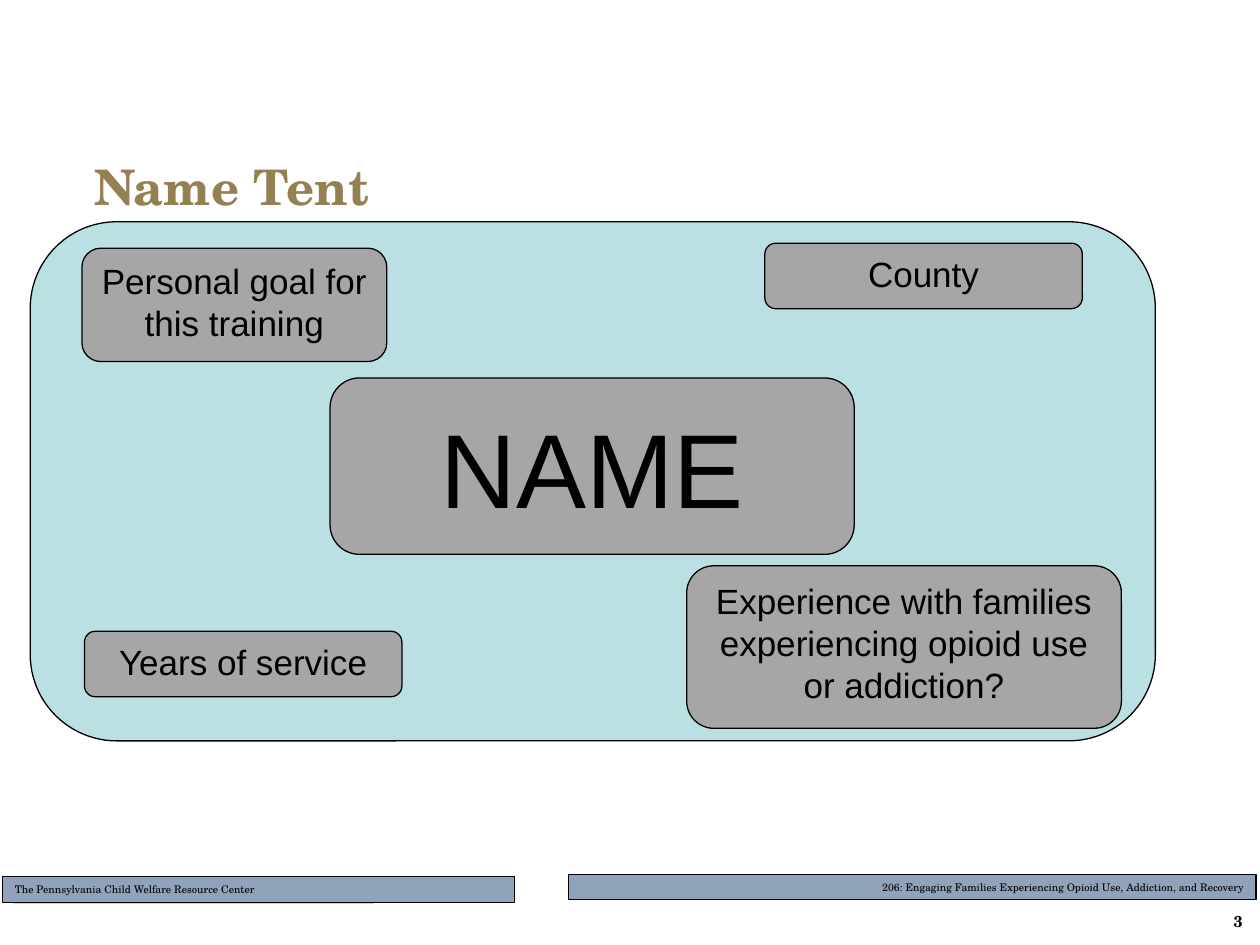
from pptx import Presentation
from pptx.dml.color import RGBColor
from pptx.enum.shapes import MSO_CONNECTOR, MSO_SHAPE
from pptx.enum.text import MSO_ANCHOR, PP_ALIGN
from pptx.oxml.ns import qn
from pptx.util import Inches, Pt
from lxml import etree

THEME = {
    "serif": "TeX Gyre Schola", "sans": "Arial",
    "ink": "000000", "title": "948151", "footer": "91A3BB",
    "rule": "E5D199", "tent": "BBE0E3", "card": "A6A6A6",
    "title_pt": 28, "name_pt": 60, "card_pt": 20, "footer_pt": 6, "number_pt": 9,
    "line_pt": 0.75, "thin_pt": 0.5,
}

TITLE = ("Name Tent", (0.65, 1.15, 9, 0.65))
NUMBER = ("3", (8.85, 7.21, 1.11, 0.21))
FOOTERS = [
    ("206: Engaging Families Experiencing Opioid Use, Addiction, and Recovery",
     (4.51, 6.94, 5.46, 0.2), PP_ALIGN.RIGHT, "line_pt"),
    ("The Pennsylvania Child Welfare Resource Center",
     (0.02, 6.96, 4.06, 0.2), PP_ALIGN.LEFT, "thin_pt"),
]
RULE = (0.1, 7.17, 2.97, 7.17)
TENT = (0.24, 1.76, 8.93, 4.12)
CARDS = [
    ("Years of service", (0.67, 5.01, 2.52, 0.52), "card_pt", MSO_ANCHOR.TOP),
    ("Experience with families experiencing opioid use or addiction?",
     (5.45, 4.49, 3.45, 1.29), "card_pt", MSO_ANCHOR.TOP),
    ("Personal goal for this training", (0.65, 1.97, 2.42, 0.9), "card_pt", MSO_ANCHOR.TOP),
    ("NAME", (2.62, 3, 4.16, 1.4), "name_pt", MSO_ANCHOR.MIDDLE),
    ("County", (6.07, 1.93, 2.52, 0.52), "card_pt", MSO_ANCHOR.TOP),
]


def color(key):
    return RGBColor.from_string(THEME[key])


def write(sp, text, size, font="serif", ink="ink", bold=False,
          align=PP_ALIGN.LEFT, anchor=MSO_ANCHOR.MIDDLE):
    tf = sp.text_frame
    tf.word_wrap = True
    tf.vertical_anchor = anchor
    p = tf.paragraphs[0]
    p.alignment = align
    r = p.add_run()
    r.text = text
    r.font.name = THEME[font]
    r.font.size = Pt(THEME[size])
    r.font.bold = bold
    r.font.color.rgb = color(ink)


def add_box(s, kind, box, fill, line="line_pt"):
    sp = s.shapes.add_shape(kind, *map(Inches, box))
    sp.shadow.inherit = False
    sp.fill.solid()
    sp.fill.fore_color.rgb = color(fill)
    sp.line.color.rgb = color("ink")
    sp.line.width = Pt(THEME[line])
    return sp


def add_rule(s, ends):
    ln = s.shapes.add_connector(MSO_CONNECTOR.STRAIGHT, *map(Inches, ends))
    ln.line.color.rgb = color("rule")
    ln.line.width = Pt(THEME["line_pt"])
    etree.SubElement(ln._element.spPr, qn("a:effectLst"))


def main():
    """Build the name tent slide."""
    prs = Presentation()
    prs.slide_width, prs.slide_height = Inches(10), Inches(7.5)
    s = prs.slides.add_slide(prs.slide_layouts[6])

    for text, box, align, line in FOOTERS:
        sp = add_box(s, MSO_SHAPE.RECTANGLE, box, "footer", line)
        write(sp, text, "footer_pt", align=align)
    add_rule(s, RULE)

    text, box = TITLE
    write(s.shapes.add_textbox(*map(Inches, box)), text, "title_pt", ink="title", bold=True)
    text, box = NUMBER
    write(s.shapes.add_textbox(*map(Inches, box)), text, "number_pt",
          bold=True, align=PP_ALIGN.RIGHT)

    add_box(s, MSO_SHAPE.ROUNDED_RECTANGLE, TENT, "tent")
    for text, box, size, anchor in CARDS:
        sp = add_box(s, MSO_SHAPE.ROUNDED_RECTANGLE, box, "card")
        write(sp, text, size, font="sans", align=PP_ALIGN.CENTER, anchor=anchor)

    prs.save("out.pptx")


if __name__ == "__main__":
    main()
